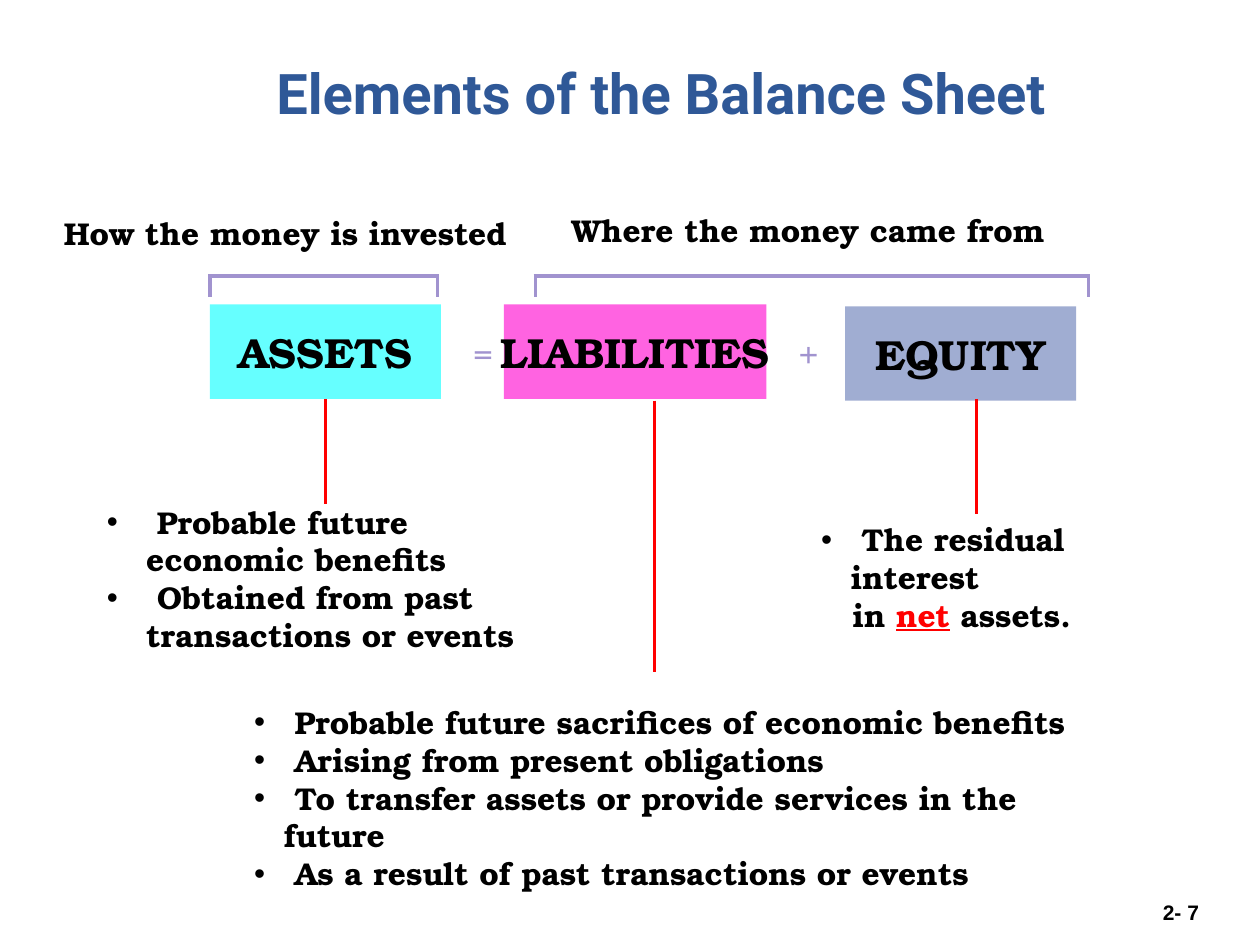
from pptx import Presentation
from pptx.dml.color import RGBColor
from pptx.enum.shapes import MSO_CONNECTOR, MSO_SHAPE
from pptx.enum.text import MSO_ANCHOR, PP_ALIGN
from pptx.oxml.ns import qn
from pptx.util import Pt
from lxml.etree import SubElement

COLORS = {
    "title": "2F5897",
    "text": "000000",
    "accent": "FF0000",
    "bracket": "A193CF",
    "assets": "66FFFF",
    "liabilities": "FF63E1",
    "equity": "A0ADD2",
}
SERIF = "TeX Gyre Bonum"


def rgb(key):
    return RGBColor.from_string(COLORS[key])


def write(paragraph, text, size=18, font=SERIF, color="text", bold=True, underline=False):
    run = paragraph.add_run()
    run.text = text
    run.font.size = Pt(size)
    run.font.name = font
    run.font.bold = bold
    run.font.underline = underline
    run.font.color.rgb = rgb(color)


def add_frame(slide, left, top, width, height, anchor=MSO_ANCHOR.TOP, wrap=True):
    box = slide.shapes.add_textbox(Pt(left), Pt(top), Pt(width), Pt(height))
    frame = box.text_frame
    frame.word_wrap = wrap
    frame.vertical_anchor = anchor
    return frame


def add_label(slide, text, bounds, align=PP_ALIGN.CENTER, anchor=MSO_ANCHOR.TOP, wrap=True, **style):
    frame = add_frame(slide, *bounds, anchor=anchor, wrap=wrap)
    paragraph = frame.paragraphs[0]
    paragraph.alignment = align
    write(paragraph, text, **style)
    return frame


def indent(paragraph, margin, bullet=True):
    properties = paragraph._p.get_or_add_pPr()
    properties.set("marL", str(Pt(margin)))
    properties.set("indent", str(-Pt(margin) if bullet else 0))
    if bullet:
        SubElement(properties, qn("a:buFont")).set("typeface", "Arial")
        SubElement(properties, qn("a:buChar")).set("char", "•")


def add_bullets(slide, items, bounds, margin):
    frame = add_frame(slide, *bounds)
    for index, item in enumerate(items):
        paragraph = frame.add_paragraph() if index else frame.paragraphs[0]
        indent(paragraph, margin)
        write(paragraph, item)
    return frame


def add_element(slide, name, left, top, width):
    block = slide.shapes.add_shape(MSO_SHAPE.RECTANGLE, Pt(left), Pt(top), Pt(width), Pt(54))
    block.shadow.inherit = False
    block.fill.solid()
    block.fill.fore_color.rgb = rgb(name)
    block.line.fill.background()
    frame = block.text_frame
    frame.word_wrap = False
    frame.vertical_anchor = MSO_ANCHOR.MIDDLE
    paragraph = frame.paragraphs[0]
    paragraph.alignment = PP_ALIGN.CENTER
    write(paragraph, name.upper(), size=24)


def add_line(slide, x1, y1, x2, y2, color):
    line = slide.shapes.add_connector(MSO_CONNECTOR.STRAIGHT, Pt(x1), Pt(y1), Pt(x2), Pt(y2))
    line.line.color.rgb = rgb(color)
    line.line.width = Pt(2)
    SubElement(line._element.spPr, qn("a:effectLst"))


def add_bracket(slide, left, right, top=157.7, drop=12.3):
    for x in (left, right):
        add_line(slide, x, top, x, top + drop, "bracket")
    add_line(slide, left - 1, top, right + 1, top, "bracket")


def main():
    presentation = Presentation()
    presentation.slide_width = Pt(720)
    presentation.slide_height = Pt(540)
    slide = presentation.slides.add_slide(presentation.slide_layouts[6])

    add_label(slide, "2- 7", (657.4, 510.5, 43.2, 21.6), align=PP_ALIGN.LEFT,
              wrap=False, size=12, font="Arial")
    title = add_label(slide, "Elements of the Balance Sheet", (72, 21.6, 612, 57.6),
                      anchor=MSO_ANCHOR.BOTTOM, size=32, font="Roboto", color="title")
    title.margin_bottom = Pt(7.2)

    add_bullets(slide, [" Probable future economic benefits",
                        " Obtained from past transactions or events"],
                (54, 283.7, 254.2, 94.3), 22.5)
    add_bullets(slide, [" Probable future sacrifices of economic benefits",
                        " Arising from present obligations",
                        " To transfer assets or provide services in the future",
                        " As a result of past transactions or events"],
                (138.2, 398.2, 510.5, 116), 17)
    residual = add_bullets(slide, [" The residual interest"], (462.2, 293.8, 226.8, 72), 17)
    net_assets = residual.add_paragraph()
    indent(net_assets, 18, bullet=False)
    write(net_assets, "in ")
    write(net_assets, "net", color="accent", underline=True)
    write(net_assets, " assets.")

    for name, left, top, width in (("assets", 120, 174, 132),
                                   ("liabilities", 288, 174, 150),
                                   ("equity", 483, 175, 132)):
        add_element(slide, name, left, top, width)
    for operator, left in (("=", 252), ("+", 438)):
        add_label(slide, operator, (left, 186, 48, 29), color="bracket", bold=False)

    for left, right in ((120, 250), (306, 622)):
        add_bracket(slide, left, right)
    add_label(slide, "How the money is invested", (18, 119, 290, 29))
    add_label(slide, "Where the money came from", (308, 117, 307.5, 29))

    for x, top, bottom in ((186, 228, 288), (374, 229, 384), (558, 228, 294)):
        add_line(slide, x, top, x, bottom, "accent")

    presentation.save("out.pptx")


if __name__ == "__main__":
    main()
